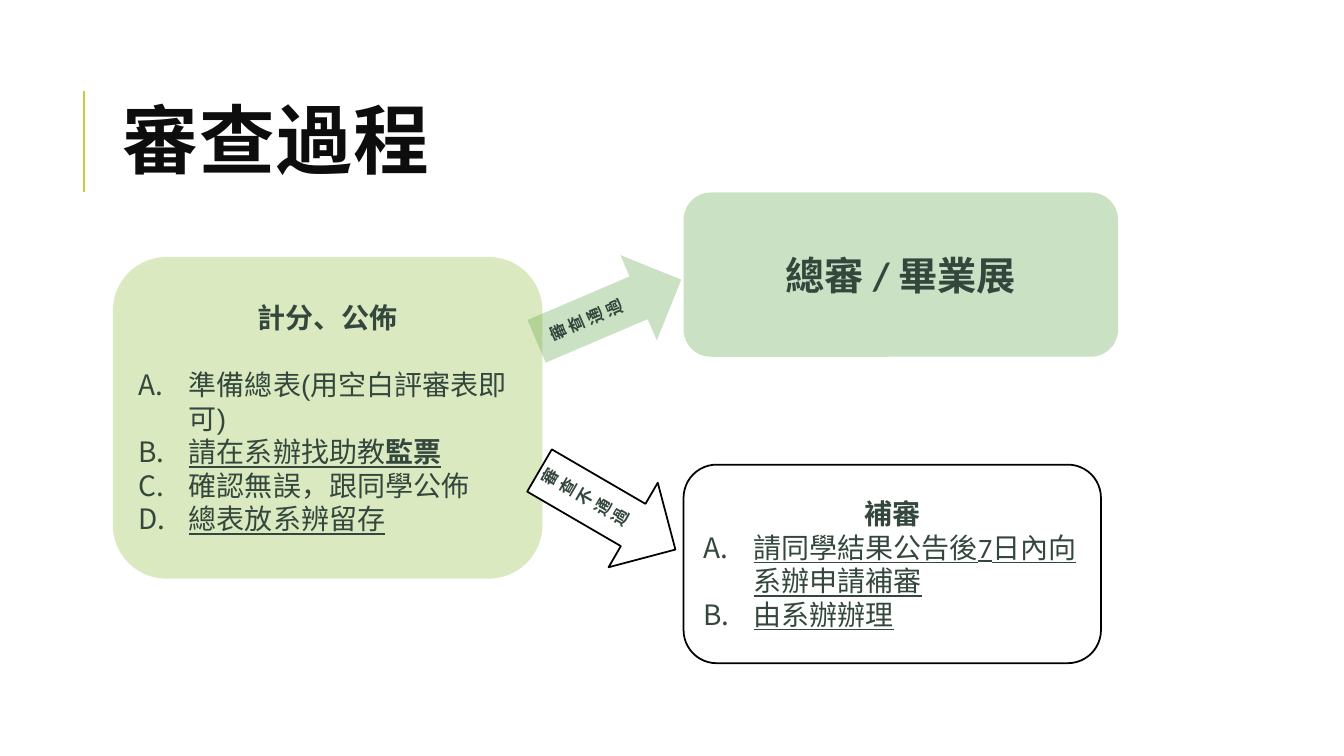
"""Build the review process slide: scoring leads to the final show or to a second review."""
from lxml import etree
from pptx import Presentation
from pptx.dml.color import RGBColor
from pptx.enum.shapes import MSO_CONNECTOR, MSO_SHAPE
from pptx.enum.text import MSO_ANCHOR, PP_ALIGN
from pptx.oxml.ns import qn
from pptx.util import Inches, Pt

ROUNDED, DOWN_ARROW = MSO_SHAPE.ROUNDED_RECTANGLE, MSO_SHAPE.DOWN_ARROW
STRAIGHT = MSO_CONNECTOR.STRAIGHT
MIDDLE = MSO_ANCHOR.MIDDLE
CENTER, LEFT = PP_ALIGN.CENTER, PP_ALIGN.LEFT
COLORS = {"title": "0D0D0D", "text": "34473D", "accent": "C0CF3A", "lime": "8AB833",
          "green": "549E39", "white": "FFFFFF", "outline": "000000"}
LEFT_COLUMN, RIGHT_COLUMN = 1.12, 6.78
HANGING = Inches(0.5)


def write(frame, runs, first=False, font="Calibri", size=20, color="text",
          align=CENTER, lettered=False, after=0, spacing=None, tracking=None):
    """Add one paragraph of (text, bold, underline) runs."""
    paragraph = frame.paragraphs[0] if first else frame.add_paragraph()
    paragraph.alignment = LEFT if lettered else align
    paragraph.space_after = Pt(after)
    if spacing:
        paragraph.line_spacing = spacing
    if lettered:
        properties = paragraph._p.get_or_add_pPr()
        properties.set("marL", str(HANGING))
        properties.set("indent", str(-HANGING))
        etree.SubElement(properties, qn("a:buFont"), typeface=font)
        etree.SubElement(properties, qn("a:buAutoNum"), type="alphaUcPeriod")
    for text, bold, underline in runs:
        run = paragraph.add_run()
        run.text = text
        run.font.name, run.font.size = font, Pt(size)
        run.font.bold, run.font.underline = bold, underline
        run.font.color.rgb = RGBColor.from_string(COLORS[color])
        if tracking:
            run._r.get_or_add_rPr().set("spc", str(tracking))


deck = Presentation()
deck.slide_width, deck.slide_height = Inches(13.33), Inches(7.5)
slide = deck.slides.add_slide(deck.slide_layouts[6])

title_rule = slide.shapes.add_connector(
    STRAIGHT, Inches(0.83), Inches(1.9), Inches(0.83), Inches(0.9))
title_rule.line.color.rgb = RGBColor.from_string(COLORS["accent"])
title_rule.line.width = Pt(1.5)
etree.SubElement(title_rule._element.spPr, qn("a:effectLst"))

title = slide.shapes.add_textbox(
    Inches(LEFT_COLUMN), Inches(0.64), Inches(10.63), Inches(1.64)).text_frame
title.word_wrap = True
title.vertical_anchor = MIDDLE
write(title, [("審查過程", True, False)], first=True, font="Cabin", size=54,
      color="title", align=LEFT, spacing=0.8, tracking=100)

scoring = [
    ([("計分、公佈", True, False)], {"font": "Arial", "after": 24}),
    ([("準備總表(用空白評審表即可)", False, False)], {"font": "Arial", "lettered": True}),
    ([("請在系辦找助教", False, True), ("監票", True, True)],
     {"font": "Arial", "lettered": True}),
    ([("確認無誤，跟同學公佈", False, False)], {"font": "Arial", "lettered": True}),
    ([("總表放系辨留存", False, True)], {"font": "Arial", "lettered": True}),
]
second_review = [
    ([("補審", True, False)], {}),
    ([("請同學結果公告後7日內向系辦申請補審", False, True)], {"lettered": True}),
    ([("由系辦辦理", False, True)], {"lettered": True}),
]
failed = [([("審查不通過", True, False)], {"size": 12})]
passed = [([("審查通過", True, False)], {"size": 12})]
final_show = [([("總審 / 畢業展", True, False)], {"size": 28})]

steps = [
    (ROUNDED, (LEFT_COLUMN, 2.55, 4.26, 3.19), 0, "lime", scoring),
    (DOWN_ARROW, (5.54, 4.28, 0.97, 1.56), 300.2, "white", failed),
    (ROUNDED, (RIGHT_COLUMN, 4.61, 4.14, 1.97), 0, "white", second_review),
    (DOWN_ARROW, (5.58, 2.3, 0.92, 1.56), 246.9, "green", passed),
    (ROUNDED, (RIGHT_COLUMN, 1.91, 4.31, 1.63), 0, "green", final_show),
]
for outline, box, angle, fill, paragraphs in steps:
    step = slide.shapes.add_shape(outline, *map(Inches, box))
    step.rotation = angle
    step.shadow.inherit = False
    step.fill.solid()
    step.fill.fore_color.rgb = RGBColor.from_string(COLORS[fill])
    if fill == "white":
        step.line.color.rgb = RGBColor.from_string(COLORS["outline"])
        step.line.width = Pt(1.25)
    else:
        step.line.fill.background()
        tint = step._element.spPr.find(qn("a:solidFill"))[0]
        etree.SubElement(tint, qn("a:alpha"), val="30000")
    frame = step.text_frame
    frame.word_wrap = True
    frame.vertical_anchor = MIDDLE
    if outline == DOWN_ARROW:
        frame.margin_bottom = Inches(0.32)
    for index, (runs, style) in enumerate(paragraphs):
        write(frame, runs, first=index == 0, **style)

deck.save("out.pptx")
